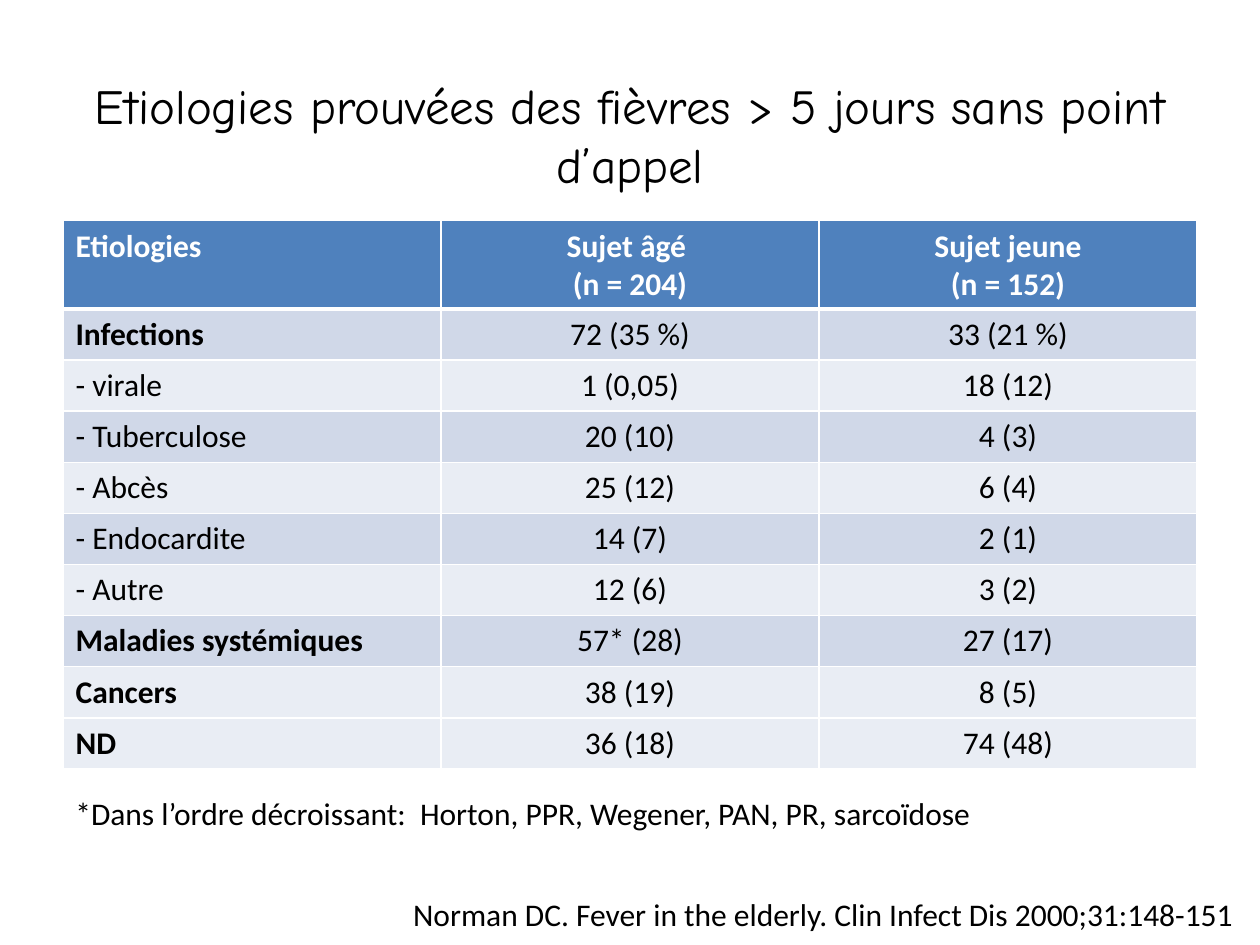
"""Build the slide on proven causes of prolonged fever."""
from dataclasses import dataclass

from lxml.etree import SubElement
from pptx import Presentation
from pptx.dml.color import RGBColor
from pptx.enum.text import MSO_ANCHOR as Anchor, MSO_AUTO_SIZE as AutoSize, PP_ALIGN as Align
from pptx.oxml.ns import qn
from pptx.util import Cm, Pt

COLORS = {
    "text": "000000",
    "white": "FFFFFF",
    "header": "4F81BD",
    "dark_band": "D0D8E8",
    "light_band": "E9EDF4",
}
BODY_FONT = "Calibri"
TITLE_FONT = "Comic Neue"
HEADER_HEIGHT = Cm(1.78)
ROW_HEIGHT = Cm(1.03)
COLUMN_WIDTH = Cm(7.62)


@dataclass(frozen=True)
class Row:
    label: str
    elderly: str
    young: str
    band: str
    bold: bool = False


@dataclass(frozen=True)
class Note:
    text: str
    left: float
    top: float
    width: float


HEADER = Row("Etiologies", "Sujet âgé \n(n = 204)", "Sujet jeune\n(n = 152)", "header", True)
ROWS = [
    Row("Infections", "72 (35 %)", "33 (21 %)", "dark_band", True),
    Row("- virale", "1 (0,05)", "18 (12)", "light_band"),
    Row("- Tuberculose", "20 (10)", "4 (3)", "dark_band"),
    Row("- Abcès", "25 (12)", "6 (4)", "light_band"),
    Row("- Endocardite", "14 (7)", "2 (1)", "dark_band"),
    Row("- Autre", "12 (6)", "3 (2)", "light_band"),
    Row("Maladies systémiques", "57* (28)", "27 (17)", "dark_band", True),
    Row("Cancers", "38 (19)", "8 (5)", "light_band", True),
    Row("ND", "36 (18)", "74 (48)", "light_band", True),
]
NOTES = [
    Note("*Dans l’ordre décroissant:  Horton, PPR, Wegener, PAN, PR, sarcoïdose", 1.27, 15.88, 18.92),
    Note("Norman DC. Fever in the elderly. Clin Infect Dis 2000;31:148-151", 8.08, 17.91, 17.32),
]


def format_text(frame, size: int = 18, font: str = BODY_FONT, color: str = "text",
                bold: bool = False, align: Align = Align.LEFT) -> None:
    """Apply one look to every run of a text frame."""
    for para in frame.paragraphs:
        para.alignment = align
        for span in para.runs:
            span.font.size = Pt(size)
            span.font.name = font
            span.font.bold = bold
            span.font.color.rgb = RGBColor.from_string(COLORS[color])


def add_border(cell, side: str, width: int) -> None:
    """Add a solid white line to one side of a cell."""
    line = SubElement(cell._tc.get_or_add_tcPr(), qn(f"a:{side}"), w=str(Pt(width)))
    fill = SubElement(line, qn("a:solidFill"))
    SubElement(fill, qn("a:srgbClr"), val=COLORS["white"])


def fill_row(table, index: int, row: Row) -> None:
    """Write and style one table row."""
    is_header = index == 0
    widths = {"lnL": 1, "lnR": 1, "lnT": 3 if index == 1 else 1, "lnB": 3 if is_header else 1}
    for column, text in enumerate((row.label, row.elderly, row.young)):
        cell = table.cell(index, column)
        for side, width in widths.items():
            add_border(cell, side, width)
        cell.fill.solid()
        cell.fill.fore_color.rgb = RGBColor.from_string(COLORS[row.band])
        cell.text_frame.text = text
        format_text(
            cell.text_frame,
            color="white" if is_header else "text",
            bold=is_header or (row.bold and column == 0),
            align=Align.CENTER if column else Align.LEFT,
        )


def add_title(page) -> None:
    """Add the centred slide title."""
    box = page.shapes.add_textbox(Cm(1.27), Cm(1.7), Cm(22.86), Cm(3.18))
    frame = box.text_frame
    frame.word_wrap = True
    frame.vertical_anchor = Anchor.MIDDLE
    frame.margin_bottom = Cm(1.3)
    frame.text = "Etiologies prouvées des fièvres > 5 jours sans point d’appel"
    format_text(frame, size=28, font=TITLE_FONT, align=Align.CENTER)


def add_causes_table(page) -> None:
    """Add the table of causes by age group."""
    rows = [HEADER, *ROWS]
    height = HEADER_HEIGHT + ROW_HEIGHT * len(ROWS)
    table = page.shapes.add_table(
        len(rows), 3, Cm(1.27), Cm(4.45), COLUMN_WIDTH * 3, height
    ).table
    table.horz_banding = False
    for index, row in enumerate(rows):
        table.rows[index].height = ROW_HEIGHT if index else HEADER_HEIGHT
        fill_row(table, index, row)


def add_note(page, note: Note) -> None:
    """Add a single-line note."""
    box = page.shapes.add_textbox(Cm(note.left), Cm(note.top), Cm(note.width), Cm(1.02))
    frame = box.text_frame
    frame.word_wrap = False
    frame.auto_size = AutoSize.SHAPE_TO_FIT_TEXT
    frame.text = note.text
    format_text(frame)


def main() -> None:
    """Create and save the deck."""
    deck = Presentation()
    deck.slide_width, deck.slide_height = Cm(25.4), Cm(19.05)
    page = deck.slides.add_slide(deck.slide_layouts[6])
    add_title(page)
    add_causes_table(page)
    for note in NOTES:
        add_note(page, note)
    deck.save("out.pptx")


if __name__ == "__main__":
    main()
